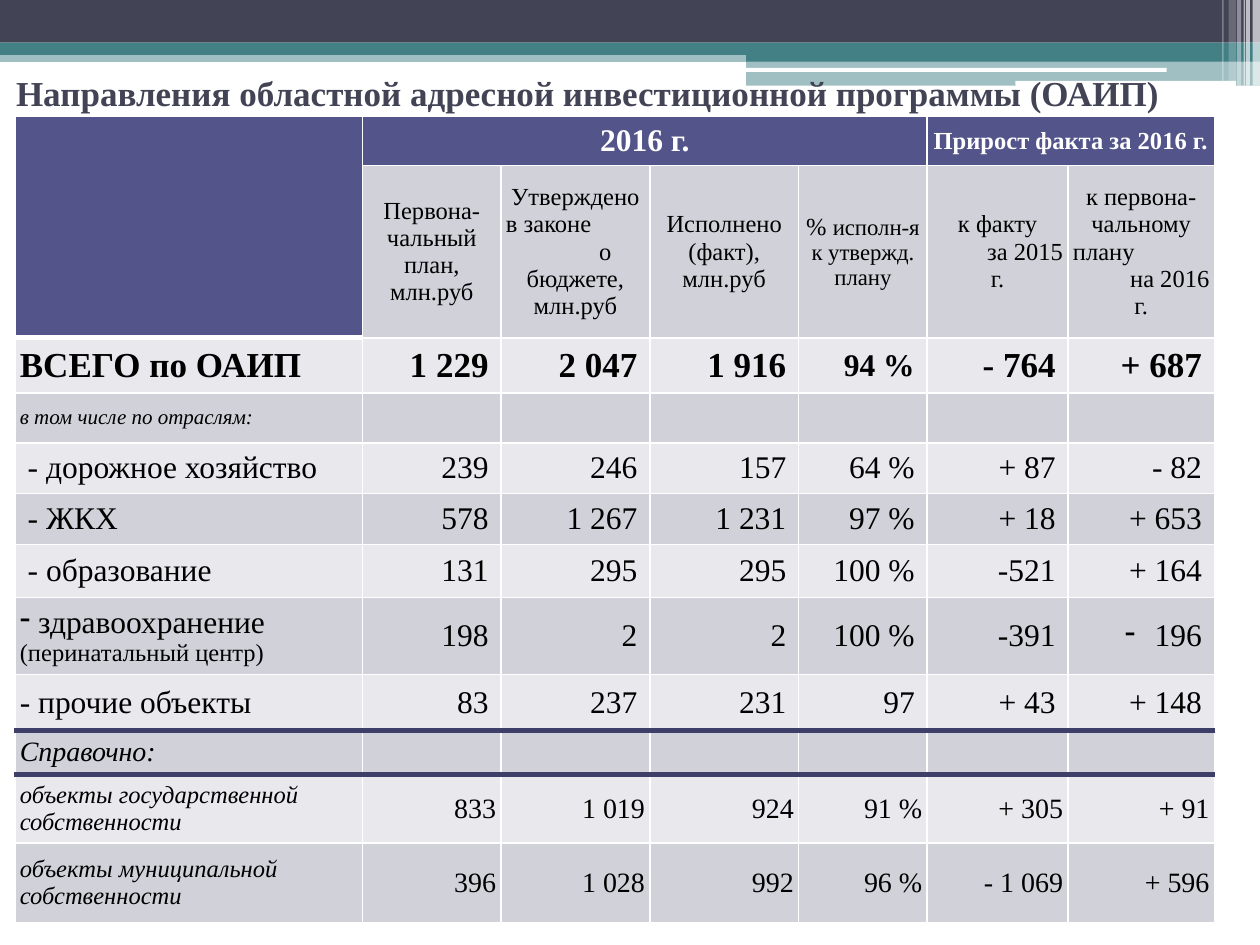
from lxml import etree
from pptx import Presentation
from pptx.dml.color import RGBColor
from pptx.enum.shapes import MSO_SHAPE
from pptx.enum.text import MSO_ANCHOR, PP_ALIGN
from pptx.oxml.ns import qn
from pptx.util import Cm, Pt

RECTANGLE, ROUNDED = MSO_SHAPE.RECTANGLE, MSO_SHAPE.ROUNDED_RECTANGLE
LEFT, CENTER, RIGHT = PP_ALIGN.LEFT, PP_ALIGN.CENTER, PP_ALIGN.RIGHT
MIDDLE = MSO_ANCHOR.MIDDLE

WHITE, BLACK, DARK, TEAL = "FFFFFF", "000000", "424456", "438086"
HEADER, LIGHT, SHADED, NAVY = "53548A", "E9E9ED", "D1D1DA", "3E3F68"
NARROW, WIDE = (0.1, 0.1), (0.25, 0.13)  # side and top cell margins


def rgb(color):
    return RGBColor.from_string(color)


class SlideBuilder:
    font_name = "Times New Roman"

    def __init__(self, slide):
        self.slide = slide

    def bar(self, left, top, width, height, color, opacity=100, kind=RECTANGLE):
        shape = self.slide.shapes.add_shape(
            kind, Cm(left), Cm(top), Cm(width), Cm(height))
        shape.shadow.inherit = False
        shape.line.fill.background()
        shape.fill.solid()
        shape.fill.fore_color.rgb = rgb(color)
        if opacity < 100:
            fill_color = shape._element.spPr.find(qn("a:solidFill"))[0]
            etree.SubElement(fill_color, qn("a:alpha"), val=str(opacity * 1000))

    def style(self, paragraph, size, color=BLACK, bold=False, italic=False,
              align=LEFT):
        paragraph.alignment = align
        font = paragraph.font
        font.name, font.size = self.font_name, Pt(size)
        font.bold, font.italic = bold, italic
        font.color.rgb = rgb(color)

    def title(self, left, top, width, height, text):
        frame = self.slide.shapes.add_textbox(
            Cm(left), Cm(top), Cm(width), Cm(height)).text_frame
        frame.word_wrap = True
        frame.margin_left = frame.margin_right = 0
        frame.margin_top = frame.margin_bottom = 0
        frame.text = text
        self.style(frame.paragraphs[0], 20, DARK, bold=True, align=CENTER)

    def table(self, left, top, columns, rows):
        table = self.slide.shapes.add_table(
            len(rows), len(columns), Cm(left), Cm(top),
            Cm(sum(columns)), Cm(sum(rows))).table
        table.first_row = table.horz_banding = False
        for column, width in zip(table.columns, columns):
            column.width = Cm(width)
        for row, height in zip(table.rows, rows):
            row.height = Cm(height)
        return table

    def cell(self, cell, fill, top=(WHITE, 1), bottom=(WHITE, 1)):
        properties = cell._tc.get_or_add_tcPr()
        edges = {"lnL": (WHITE, 1), "lnR": (WHITE, 1), "lnT": top, "lnB": bottom}
        for tag, (color, width) in edges.items():
            line = etree.SubElement(properties, qn("a:" + tag), w=str(Pt(width)))
            solid = etree.SubElement(line, qn("a:solidFill"))
            etree.SubElement(solid, qn("a:srgbClr"), val=color)
        cell.fill.solid()
        cell.fill.fore_color.rgb = rgb(fill)
        cell.vertical_anchor = MIDDLE
        cell.margin_top = cell.margin_bottom = 0

    def text(self, cell, text, size, margins=NARROW, **style):
        cell.margin_left = cell.margin_right = Cm(margins[0])
        cell.margin_top = cell.margin_bottom = Cm(margins[1])
        paragraph = cell.text_frame.paragraphs[0]
        paragraph.text = text
        self.style(paragraph, size, **style)
        return paragraph

    def line(self, cell, text, size, align, indent=0):
        paragraph = cell.text_frame.add_paragraph()
        paragraph.text = text
        self.style(paragraph, size, align=align)
        if indent:
            paragraph._p.get_or_add_pPr().set("marL", str(Cm(indent)))

    def run(self, paragraph, text, size):
        run = paragraph.add_run()
        run.text = text
        run.font.size = Pt(size)

    def dash(self, paragraph, indent=0):
        properties = paragraph._p.get_or_add_pPr()
        properties.set("marL", str(Cm(indent)))
        properties.set("indent", str(-Cm(indent)))
        bullet = etree.Element(qn("a:buChar"), char="-")
        properties.insert(0, bullet)


COLUMNS = [7.01, 2.79, 3, 3, 2.59, 2.84, 2.95]
ROWS = [1, 3.47, 1.07, 1.01, 1.01, 1.01, 1.07, 1.44, 1.13, 0.88, 1.37, 1.61]

# First line of each column heading, then further lines: text, align, indent
HEADINGS = [
    ("Первона-чальный план, млн.руб", []),
    ("Утверждено", [("в законе", LEFT, 0), ("о", CENTER, 1.2),
                    ("бюджете, млн.руб", CENTER, 0)]),
    ("Исполнено (факт), млн.руб", []),
    ("", []),
    ("к факту", [("за 2015", RIGHT, 0), ("г.", CENTER, 0)]),
    ("к первона-чальному", [("плану", LEFT, 0), ("на 2016", RIGHT, 0),
                            ("г.", CENTER, 0)]),
]

TOTAL = dict(size=20, bold=True)
BRANCH = dict(size=18)
NOTE = dict(size=14, italic=True)

# Label, label style, value size, value margins, values
BODY = [
    ("ВСЕГО по ОАИП", TOTAL, 20, WIDE,
     ["1 229", "2 047", "1 916", "94 %", "- 764", "+ 687"]),
    ("в том числе по отраслям:", dict(size=12, italic=True), 18, WIDE, []),
    (" - дорожное хозяйство", BRANCH, 18, WIDE,
     ["239", "246", "157", "64 %", "+ 87", "- 82"]),
    (" - ЖКХ", BRANCH, 18, WIDE,
     ["578", "1 267", "1 231", "97 %", "+ 18", "+ 653"]),
    (" - образование", BRANCH, 18, WIDE,
     ["131", "295", "295", "100 %", "-521", "+ 164"]),
    ("", BRANCH, 18, WIDE, ["198", "2", "2", "100 %", "-391", "196"]),
    ("- прочие объекты", BRANCH, 18, WIDE,
     ["83", "237", "231", "97", "+ 43", "+ 148"]),
    ("Справочно:", dict(size=16, italic=True), 16, WIDE, []),
    ("объекты государственной собственности", NOTE, 16, NARROW,
     ["833", "1 019", "924", "91 %", "+ 305", "+ 91"]),
    ("объекты муниципальной собственности", NOTE, 16, NARROW,
     ["396", "1 028", "992", "96 %", "- 1 069", "+ 596"]),
]
HEALTH_ROW, REFERENCE_ROW = 7, 9


def main():
    presentation = Presentation()
    presentation.slide_width, presentation.slide_height = Cm(25.4), Cm(19.05)
    slide = presentation.slides.add_slide(presentation.slide_layouts[6])
    builder = SlideBuilder(slide)

    # Banner
    builder.bar(0, 1.02, 25.4, 0.23, TEAL, 50)
    builder.bar(0, 0, 25.4, 0.86, DARK)
    builder.bar(0, 0.86, 25.4, 0.25, TEAL)
    builder.bar(15.04, 0.99, 10.36, 0.25, TEAL)
    builder.bar(15.04, 1.22, 10.36, 0.51, TEAL, 50)
    builder.bar(15.01, 1.37, 8.51, 0.08, WHITE, kind=ROUNDED)
    builder.bar(20.47, 1.63, 4.45, 0.1, WHITE, kind=ROUNDED)
    for left, width, height, opacity in [
            (25.25, 0.15, 1.73, 65), (25.12, 0.08, 1.73, 65),
            (25.07, 0.03, 1.73, 60), (24.94, 0.08, 1.73, 40),
            (24.77, 0.15, 1.63, 20), (24.64, 0.03, 1.63, 30)]:
        builder.bar(left, 0, width, height, WHITE, opacity)

    builder.title(0, 1.45, 23.7, 0.85,
                  "Направления областной адресной инвестиционной программы (ОАИП)")

    # Table cells: fills and borders
    table = builder.table(0.3, 2.34, COLUMNS, ROWS)
    thick = {1: WHITE, REFERENCE_ROW - 1: NAVY, REFERENCE_ROW: NAVY}
    for row in range(len(ROWS)):
        for column in range(len(COLUMNS)):
            is_header = row == 0 or (row == 1 and column == 0)
            fill = HEADER if is_header else SHADED if row % 2 else LIGHT
            edges = [(thick[r], 3) if r in thick and (r > 1 or column == 0)
                     else (WHITE, 1) for r in (row - 1, row)]
            builder.cell(table.cell(row, column), fill, *edges)

    # Table heading
    table.cell(0, 0).merge(table.cell(1, 0))
    table.cell(0, 1).merge(table.cell(0, 4))
    table.cell(0, 5).merge(table.cell(0, 6))
    for column, text, size in [(1, "2016 г.", 18),
                               (5, "Прирост факта за 2016 г.", 14)]:
        builder.text(table.cell(0, column), text, size,
                     color=WHITE, bold=True, align=CENTER)
    for column, (first, lines) in enumerate(HEADINGS, 1):
        cell = table.cell(1, column)
        builder.text(cell, first, 14, align=CENTER)
        for text, align, indent in lines:
            builder.line(cell, text, 14, align, indent)
    percent = table.cell(1, 4).text_frame.paragraphs[0]
    builder.run(percent, "% ", 14)
    builder.run(percent, "исполн-я к утвержд. плану", 13)

    # Table body
    for row, (label, style, size, margins, values) in enumerate(BODY, 2):
        builder.text(table.cell(row, 0), label, **style)
        for column, value in enumerate(values, 1):
            value_size = 18 if value == "94 %" else size
            builder.text(table.cell(row, column), value, value_size, margins,
                         bold=style is TOTAL, align=RIGHT)
    health = table.cell(HEALTH_ROW, 0).text_frame.paragraphs[0]
    builder.run(health, " здравоохранение ", 18)
    builder.run(health, "(перинатальный центр)", 14)
    builder.dash(health)
    builder.dash(table.cell(HEALTH_ROW, 6).text_frame.paragraphs[0], 0.6)

    presentation.save("out.pptx")


if __name__ == "__main__":
    main()
